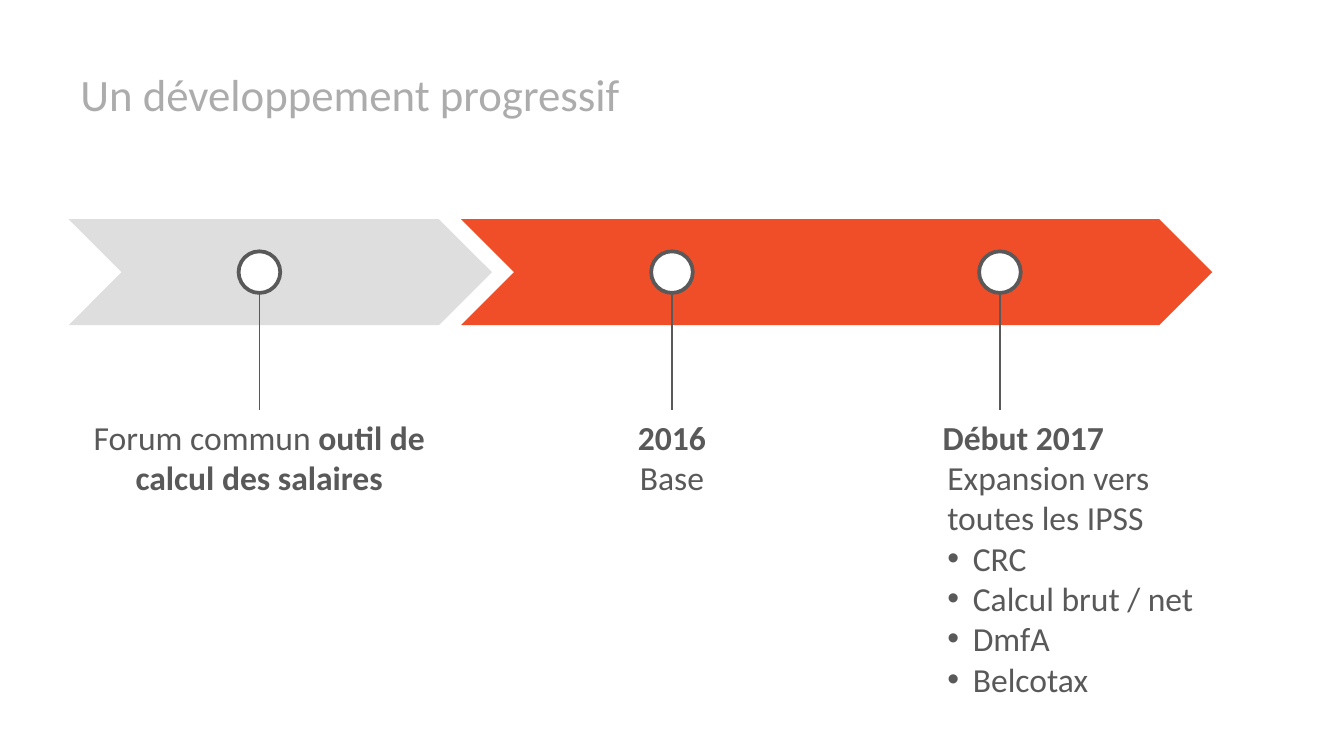
from pptx import Presentation
from pptx.dml.color import RGBColor
from pptx.enum.shapes import MSO_CONNECTOR as Link, MSO_SHAPE as Kind
from pptx.enum.text import MSO_ANCHOR as Anchor, PP_ALIGN as Align
from pptx.oxml.ns import qn
from pptx.util import Inches, Pt
from lxml import etree

WHITE = RGBColor(0xFF, 0xFF, 0xFF)
PALE = RGBColor(0xDE, 0xDE, 0xDE)
GRAY = RGBColor(0xAC, 0xAC, 0xAC)
DARK = RGBColor(0x59, 0x59, 0x59)
RED = RGBColor(0xF0, 0x4E, 0x29)

# Widescreen 16:9 slide
deck = Presentation()
deck.slide_width = Inches(10)
deck.slide_height = Inches(10 * 9 / 16)
slide = deck.slides.add_slide(deck.slide_layouts[6])
shapes = slide.shapes


def add_box(left, top, width, height):
    box = shapes.add_textbox(Inches(left), Inches(top), Inches(width), Inches(height))
    box.text_frame.word_wrap = True
    return box.text_frame


def add_run(para, text, bold=False, size=18, color=DARK):
    run = para.add_run()
    run.text = text
    run.font.name = "Calibri"
    run.font.size = Pt(size)
    run.font.bold = bold
    run.font.color.rgb = color


# Title
frame = add_box(0.5, 0.23, 9, 0.94)
frame.vertical_anchor = Anchor.MIDDLE
add_run(frame.paragraphs[0], "Un développement progressif", size=24, color=GRAY)

# Timeline chevrons
for left, width, color in [(0.51, 3.15, PALE), (3.43, 5.59, RED)]:
    band = shapes.add_shape(Kind.CHEVRON, Inches(left), Inches(1.63), Inches(width), Inches(0.79))
    band.shadow.inherit = False
    band.fill.solid()
    band.fill.fore_color.rgb = color
    band.line.fill.background()

# Milestone dots and their stems
SIZE, TOP, FOOT = 0.31, 1.87, 3.05
for mid in (1.93, 5, 7.44):
    dot = shapes.add_shape(Kind.OVAL, Inches(mid - SIZE / 2), Inches(TOP), Inches(SIZE), Inches(SIZE))
    dot.shadow.inherit = False
    dot.fill.solid()
    dot.fill.fore_color.rgb = WHITE
    dot.line.color.rgb = DARK
    dot.line.width = Pt(2)

    stem = shapes.add_connector(Link.STRAIGHT, Inches(mid), Inches(TOP + SIZE), Inches(mid), Inches(FOOT))
    stem.line.color.rgb = DARK
    stem.line.width = Pt(0.75)
    etree.SubElement(stem.element.spPr, qn("a:effectLst"))

# Milestone captions: centred lines
captions = [
    (0.55, 2.76, 1.01, [[("Forum commun ", False), ("outil de calcul des salaires", True)]]),
    (3.62, 2.76, 0.71, [[("2016", True)], [("Base", False)]]),
    (6.06, 3.11, 2.52, [[("Début 2017", True)]]),
]
for left, width, height, lines in captions:
    frame = add_box(left, FOOT, width, height)
    for i, runs in enumerate(lines):
        para = frame.add_paragraph() if i else frame.paragraphs[0]
        para.alignment = Align.CENTER
        for text, bold in runs:
            add_run(para, text, bold)

# Indented details under the last caption
para = frame.add_paragraph()
para._p.get_or_add_pPr().set("marL", str(Inches(0.89)))
add_run(para, "Expansion vers toutes les IPSS")
for text in ("CRC", "Calcul brut / net", "DmfA", "Belcotax"):
    para = frame.add_paragraph()
    para.level = 1
    props = para._p.get_or_add_pPr()
    props.set("marL", str(Inches(1.08)))
    props.set("indent", str(Inches(-0.19)))
    etree.SubElement(props, qn("a:buFont")).set("typeface", "Arial")
    etree.SubElement(props, qn("a:buChar")).set("char", "•")
    add_run(para, text)

deck.save("out.pptx")
